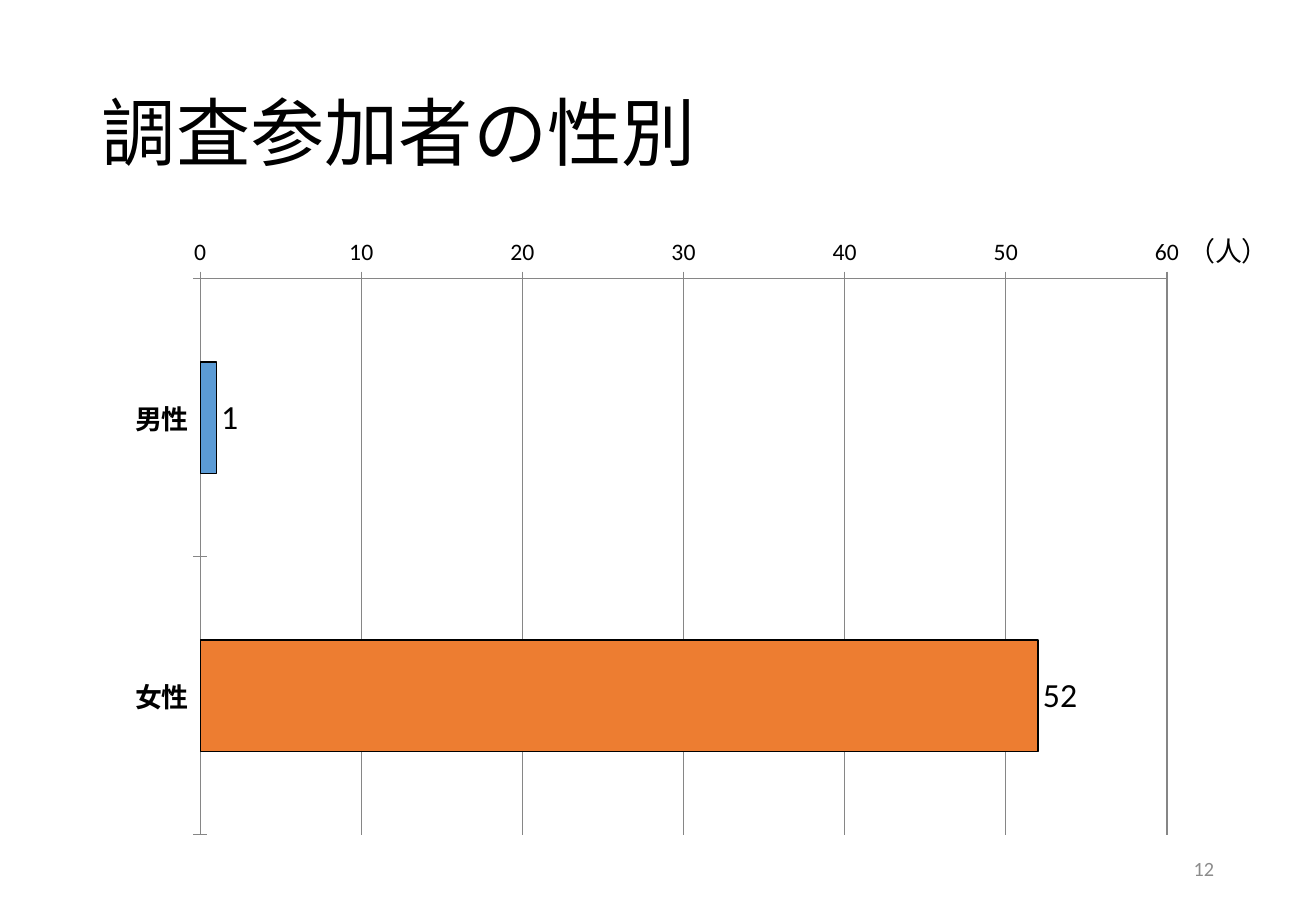
from dataclasses import dataclass

from lxml.etree import SubElement
from pptx import Presentation
from pptx.chart.data import CategoryChartData
from pptx.dml.color import RGBColor
from pptx.enum.chart import XL_CHART_TYPE, XL_LABEL_POSITION, XL_TICK_MARK
from pptx.enum.text import MSO_ANCHOR, PP_ALIGN
from pptx.oxml.ns import qn
from pptx.util import Inches, Pt


@dataclass(frozen=True)
class Theme:
    font: str = "Calibri"
    text: RGBColor = RGBColor(0, 0, 0)
    muted: RGBColor = RGBColor(0x8C, 0x8C, 0x8C)
    grid: RGBColor = RGBColor(0x86, 0x86, 0x86)
    male: RGBColor = RGBColor(0x5B, 0x9B, 0xD5)
    female: RGBColor = RGBColor(0xED, 0x7D, 0x31)
    title_size: int = 44
    value_size: int = 20
    category_size: int = 16
    unit_size: int = 16
    scale_size: int = 14
    number_size: int = 12


THEME = Theme()


def set_font(font, size, color=THEME.text, bold=False):
    font.name = THEME.font
    font.size = Pt(size)
    font.bold = bold
    font.color.rgb = color


def add_text(s, box, text, size, color=THEME.text, align=PP_ALIGN.LEFT,
             anchor=MSO_ANCHOR.MIDDLE, spacing=1.0):
    tf = s.shapes.add_textbox(*map(Inches, box)).text_frame
    tf.word_wrap = True
    tf.vertical_anchor = anchor
    tf.text = text
    p = tf.paragraphs[0]
    p.alignment = align
    p.line_spacing = spacing
    set_font(p.runs[0].font, size, color)


def place_plot(chart, x, y, w, h):
    """Fix the inner plot area, in fractions of the chart."""
    plot_area = chart._chartSpace.chart.plotArea
    for old in plot_area.findall(qn("c:layout")):
        plot_area.remove(old)
    layout = SubElement(plot_area, qn("c:layout"))
    plot_area.insert(0, layout)
    manual = SubElement(layout, qn("c:manualLayout"))
    for tag, val in (("layoutTarget", "inner"), ("xMode", "edge"), ("yMode", "edge"),
                     ("x", x), ("y", y), ("w", w), ("h", h)):
        SubElement(manual, qn(f"c:{tag}")).set("val", str(val))


def style_axis(axis, size, bold=False):
    axis.major_tick_mark = XL_TICK_MARK.CROSS
    axis.minor_tick_mark = XL_TICK_MARK.NONE
    axis.format.line.color.rgb = THEME.grid
    axis.format.line.width = Pt(0.75)
    set_font(axis.tick_labels.font, size, bold=bold)


def add_gender_chart(s, box):
    data = CategoryChartData()
    data.categories = ["男性", "女性"]
    data.add_series("人数", [1, 52])
    chart = s.shapes.add_chart(XL_CHART_TYPE.BAR_CLUSTERED, *map(Inches, box), data).chart
    chart.has_legend = False
    chart.has_title = False
    set_font(chart.font, THEME.scale_size)
    place_plot(chart, 0.079, 0.085, 0.888, 0.894)

    style_axis(chart.category_axis, THEME.category_size, bold=True)
    chart.category_axis.reverse_order = True
    scale = chart.value_axis
    style_axis(scale, THEME.scale_size)
    scale.minimum_scale, scale.maximum_scale, scale.major_unit = 0, 60, 10
    scale.has_major_gridlines = True
    scale.major_gridlines.format.line.color.rgb = THEME.grid
    scale.major_gridlines.format.line.width = Pt(0.75)

    plot = chart.plots[0]
    plot.gap_width = 150
    plot.vary_by_categories = False
    plot.has_data_labels = True
    labels = plot.data_labels
    labels.show_value = True
    labels.position = XL_LABEL_POSITION.OUTSIDE_END
    set_font(labels.font, THEME.value_size)
    for i, color in enumerate((THEME.male, THEME.female)):
        bar = plot.series[0].points[i].format
        bar.fill.solid()
        bar.fill.fore_color.rgb = color
        bar.line.color.rgb = THEME.text
        bar.line.width = Pt(0.75)


def build_chart_slide(prs):
    s = prs.slides.add_slide(prs.slide_layouts[6])
    add_text(s, (0.74, 0.4, 9.34, 1.45), "調査参加者の性別", THEME.title_size, spacing=0.9)
    add_gender_chart(s, (0.94, 1.86, 8.96, 5.12))
    add_text(s, (9.6, 1.88, 1.02, 0.37), "（人）", THEME.unit_size,
             align=PP_ALIGN.CENTER, anchor=MSO_ANCHOR.TOP)
    add_text(s, (7.65, 6.95, 2.44, 0.4), "12", THEME.number_size, THEME.muted, PP_ALIGN.RIGHT)


def main():
    prs = Presentation()
    prs.slide_width, prs.slide_height = Inches(10.83), Inches(7.5)
    build_chart_slide(prs)
    prs.save("out.pptx")


if __name__ == "__main__":
    main()
